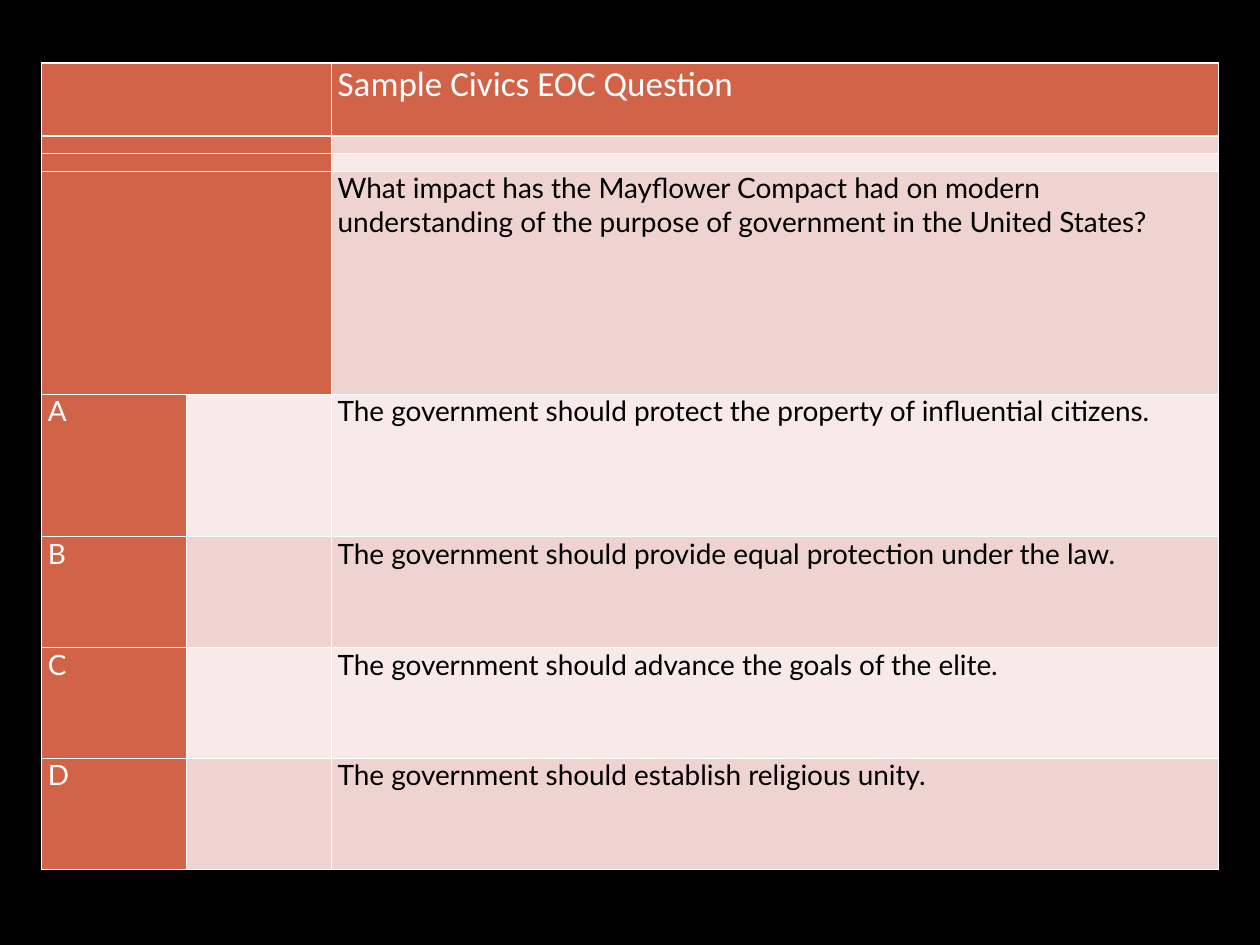
from lxml import etree
from pptx import Presentation
from pptx import util as u
from pptx.dml.color import RGBColor
from pptx.enum import text
from pptx.oxml import ns

BLACK = RGBColor(0x00, 0x00, 0x00)
WHITE = RGBColor(0xFF, 0xFF, 0xFF)
RUST = RGBColor(0xD1, 0x63, 0x49)
ROSE = RGBColor(0xEE, 0xD3, 0xD0)
BLUSH = RGBColor(0xF7, 0xEA, 0xE9)

HEADING = "Sample Civics EOC Question"
QUESTION = ("What impact has the Mayflower Compact had on modern understanding "
            "of the purpose of government in the United States?")
ANSWERS = [
    ("A", "The government should protect the property of influential citizens."),
    ("B", "The government should provide equal protection under the law."),
    ("C", "The government should advance the goals of the elite."),
    ("D", "The government should establish religious unity."),
]
ROWS = [("", HEADING), ("", ""), ("", ""), ("", QUESTION)] + ANSWERS
QUESTION_ROWS = len(ROWS) - len(ANSWERS)
COLUMN_WIDTHS = [1.15, 1.15, 7.04]
ROW_HEIGHTS = [0.58, 0.14, 0.14, 1.77, 1.13, 0.88, 0.88, 0.88]


class QuestionSlide:
    heading_font = ("Calibri", 20)
    body_font = ("Lato", 16)
    empty_size = 6
    border_width = 1

    def __init__(self, deck):
        self.slide = deck.slides.add_slide(deck.slide_layouts[6])
        background = self.slide.background.fill
        background.solid()
        background.fore_color.rgb = BLACK

    def table(self, left, top, widths, heights):
        frame = self.slide.shapes.add_table(
            len(heights), len(widths), u.Inches(left), u.Inches(top),
            u.Inches(sum(widths)), u.Inches(sum(heights)))
        grid = frame.table
        grid.first_row = grid.horz_banding = False
        for column, width in zip(grid.columns, widths):
            column.width = u.Inches(width)
        for row, height in zip(grid.rows, heights):
            row.height = u.Inches(height)
        return grid

    def borders(self, cell):
        properties = cell._tc.get_or_add_tcPr()
        for side in ("a:lnL", "a:lnR", "a:lnT", "a:lnB"):
            line = etree.SubElement(properties, ns.qn(side),
                                    w=str(u.Pt(self.border_width)))
            paint = etree.SubElement(line, ns.qn("a:solidFill"))
            etree.SubElement(paint, ns.qn("a:srgbClr"), val=str(WHITE))

    def cell(self, cell, wording, fill, color, font):
        self.borders(cell)
        cell.fill.solid()
        cell.fill.fore_color.rgb = fill
        cell.margin_left = cell.margin_right = u.Inches(0.05)
        cell.margin_top = cell.margin_bottom = 0
        paragraph = cell.text_frame.paragraphs[0]
        paragraph.alignment = text.PP_ALIGN.LEFT
        if wording:
            run = paragraph.add_run()
            run.text = wording
            run.font.name, size = font
            run.font.size = u.Pt(size)
            run.font.color.rgb = color
        else:
            # A small end mark lets the thin rows keep their height.
            etree.SubElement(paragraph._p, ns.qn("a:endParaRPr"),
                             sz=str(self.empty_size * 100))


def main():
    deck = Presentation()
    deck.slide_width, deck.slide_height = u.Inches(10), u.Inches(7.5)
    page = QuestionSlide(deck)
    grid = page.table(0.33, 0.5, COLUMN_WIDTHS, ROW_HEIGHTS)

    for index, (letter, wording) in enumerate(ROWS):
        is_heading = index == 0
        font = page.heading_font if is_heading else page.body_font
        band = RUST if is_heading else ROSE if index % 2 else BLUSH
        is_answer = index >= QUESTION_ROWS
        page.cell(grid.cell(index, 0), letter, RUST, WHITE, font)
        page.cell(grid.cell(index, 1), "", band if is_answer else RUST, BLACK, font)
        page.cell(grid.cell(index, 2), wording, band,
                  WHITE if is_heading else BLACK, font)
        if not is_answer:
            grid.cell(index, 0).merge(grid.cell(index, 1))

    deck.save("out.pptx")


if __name__ == "__main__":
    main()
